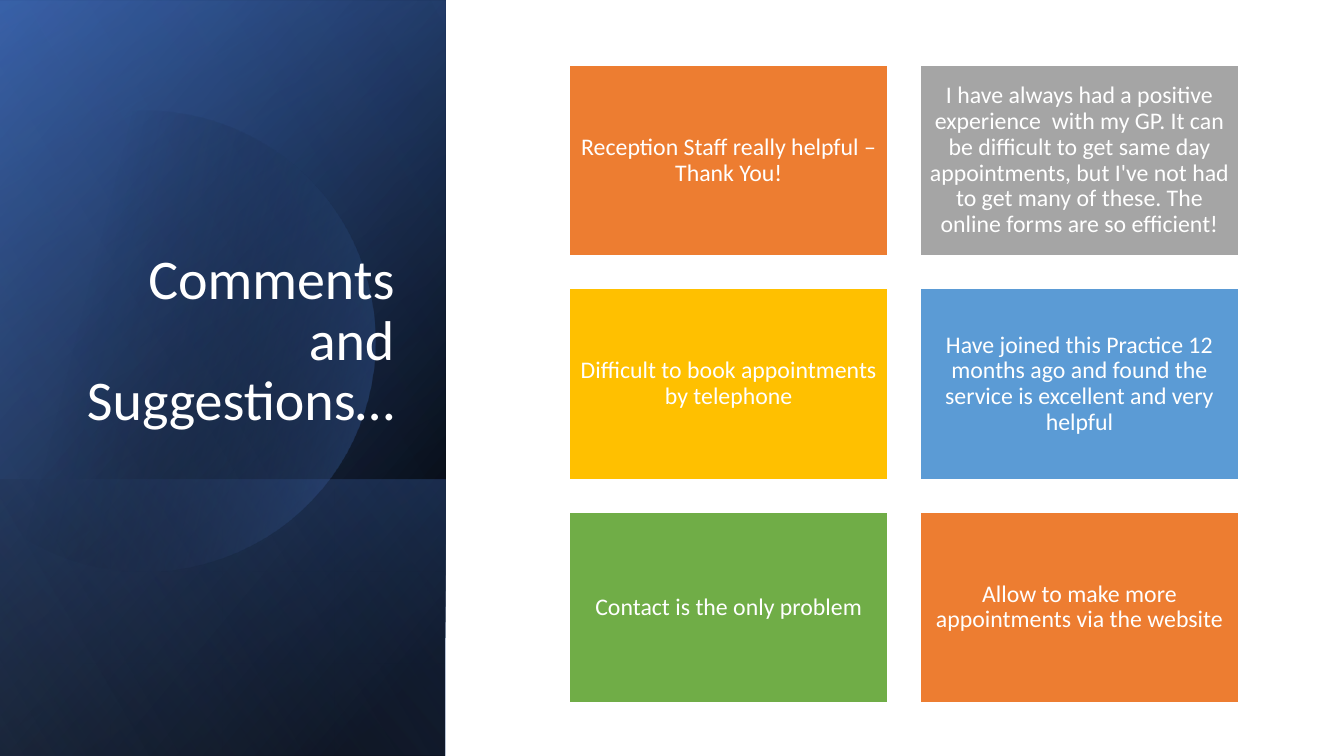
from dataclasses import dataclass

from pptx import Presentation
from pptx.dml.color import RGBColor
from pptx.enum.shapes import MSO_SHAPE
from pptx.enum.text import MSO_ANCHOR, PP_ALIGN
from pptx.oxml.ns import qn
from pptx.oxml.xmlchemy import OxmlElement
from pptx.util import Cm, Pt


@dataclass(frozen=True)
class Theme:
    font: str = "Calibri"
    title_size: int = 40
    card_size: int = 17
    white: str = "FFFFFF"
    black: str = "000000"
    navy: str = "2F5597"
    royal: str = "4472C4"
    pale: str = "8FAADC"
    orange: str = "ED7D31"
    gray: str = "A5A5A5"
    gold: str = "FFC000"
    sky: str = "5B9BD5"
    green: str = "70AD47"


THEME = Theme()

CARDS = [
    ("Reception Staff really helpful – Thank You!", THEME.orange),
    ("I have always had a positive experience  with my GP. It can be difficult to get "
     "same day appointments, but I've not had to get many of these. The online forms "
     "are so efficient!", THEME.gray),
    ("Difficult to book appointments by telephone", THEME.gold),
    ("Have joined this Practice 12 months ago and found the service is excellent "
     "and very helpful", THEME.sky),
    ("Contact is the only problem", THEME.green),
    ("Allow to make more appointments via the website", THEME.orange),
]

DISC_START = (3.78, 2.79)
DISC_RIGHT = [
    [(6.25, 2.84), (8.51, 4.5), (9.22, 6.99)],
    [(10.11, 10.08), (8.33, 13.28), (5.26, 14.17)],
    [(3.33, 14.73), (1.35, 14.25), (-0.08, 13.06)],
]
DISC_LEFT_EDGE = [(-0.38, 12.78), (-0.38, 4.45), (0, 4.09)]
DISC_TOP = [
    [(0.58, 3.61), (1.27, 3.23), (2.03, 3.02)],
    [(2.62, 2.87), (3.2, 2.79), DISC_START],
]


def curve_points(start, curves, steps=24):
    points = []
    for first, second, end in curves:
        for step in range(1, steps + 1):
            t = step / steps
            weights = ((1 - t) ** 3, 3 * t * (1 - t) ** 2, 3 * t ** 2 * (1 - t), t ** 3)
            corners = (start, first, second, end)
            points.append(tuple(
                sum(weight * corner[axis] for weight, corner in zip(weights, corners))
                for axis in (0, 1)
            ))
        start = end
    return points


def paint_gradient(shape, stops, angle):
    shape.shadow.inherit = False
    shape.line.fill.background()
    shape.fill.gradient()
    shape.fill.gradient_angle = 360 - angle
    for stop, (position, color, _) in zip(shape.fill.gradient_stops, stops):
        stop.position = position / 100
        stop.color.rgb = RGBColor.from_string(color)
    colors = shape._element.spPr.iter(qn("a:srgbClr"))
    for color, (_, _, opacity) in zip(colors, stops):
        alpha = OxmlElement("a:alpha")
        alpha.set("val", str(opacity * 1000))
        color.append(alpha)


def add_turned_panel(page, center_y, length, stops, angle):
    center_x, breadth = 5.61, 11.23
    panel = page.shapes.add_shape(
        MSO_SHAPE.RECTANGLE, Cm(center_x - length / 2), Cm(center_y - breadth / 2),
        Cm(length), Cm(breadth))
    panel.rotation = 90
    panel._element.spPr.xfrm.set("flipH", "1")
    paint_gradient(panel, stops, angle)


def add_disc(page, stops, angle):
    points = curve_points(DISC_START, DISC_RIGHT) + DISC_LEFT_EDGE
    points += curve_points(DISC_LEFT_EDGE[-1], DISC_TOP)
    builder = page.shapes.build_freeform(Cm(DISC_START[0]), Cm(DISC_START[1]))
    builder.add_line_segments([(Cm(x), Cm(y)) for x, y in points], close=True)
    paint_gradient(builder.convert_to_shape(), stops, angle)


def write_text(box, text, size, align, anchor):
    frame = box.text_frame
    frame.word_wrap = True
    frame.vertical_anchor = anchor
    para = frame.paragraphs[0]
    para.alignment = align
    para.line_spacing = 0.9
    span = para.add_run()
    span.text = text
    span.font.name = THEME.font
    span.font.size = Pt(size)
    span.font.color.rgb = RGBColor.from_string(THEME.white)


def add_title(page, text):
    box = page.shapes.add_textbox(Cm(1.3), Cm(1.63), Cm(8.89), Cm(9.4))
    write_text(box, text, THEME.title_size, PP_ALIGN.RIGHT, MSO_ANCHOR.BOTTOM)


def add_card(page, left, top, text, color):
    card = page.shapes.add_shape(
        MSO_SHAPE.RECTANGLE, Cm(left), Cm(top), Cm(8.03), Cm(4.83))
    card.shadow.inherit = False
    card.fill.solid()
    card.fill.fore_color.rgb = RGBColor.from_string(color)
    card.line.color.rgb = RGBColor.from_string(THEME.white)
    card.line.width = Pt(1.5)
    frame = card.text_frame
    frame.margin_left = frame.margin_right = Cm(0.18)
    frame.margin_top = frame.margin_bottom = Cm(0.18)
    write_text(card, text, THEME.card_size, PP_ALIGN.CENTER, MSO_ANCHOR.MIDDLE)


def add_backdrop(page):
    middle, height = 9.53, 19.05
    add_turned_panel(page, middle, height,
                     [(8, THEME.black, 100), (100, THEME.navy, 100)], 50)
    add_turned_panel(page, middle, height,
                     [(0, THEME.black, 0), (99, THEME.royal, 46)], 30)
    add_turned_panel(page, 15.57, 6.96,
                     [(2, THEME.royal, 29), (100, THEME.black, 30)], 130)
    add_disc(page, [(29, THEME.black, 0), (100, THEME.royal, 43)], 14)
    add_turned_panel(page, middle, height,
                     [(0, THEME.black, 0), (99, THEME.pale, 11)], 120)


def main():
    deck = Presentation()
    deck.slide_width, deck.slide_height = Cm(33.87), Cm(19.05)
    page = deck.slides.add_slide(deck.slide_layouts[6])
    add_backdrop(page)
    add_title(page, "Comments and Suggestions…")
    for index, (text, color) in enumerate(CARDS):
        row, column = divmod(index, 2)
        add_card(page, 14.35 + 8.84 * column, 1.63 + 5.63 * row, text, color)
    deck.save("out.pptx")


if __name__ == "__main__":
    main()
